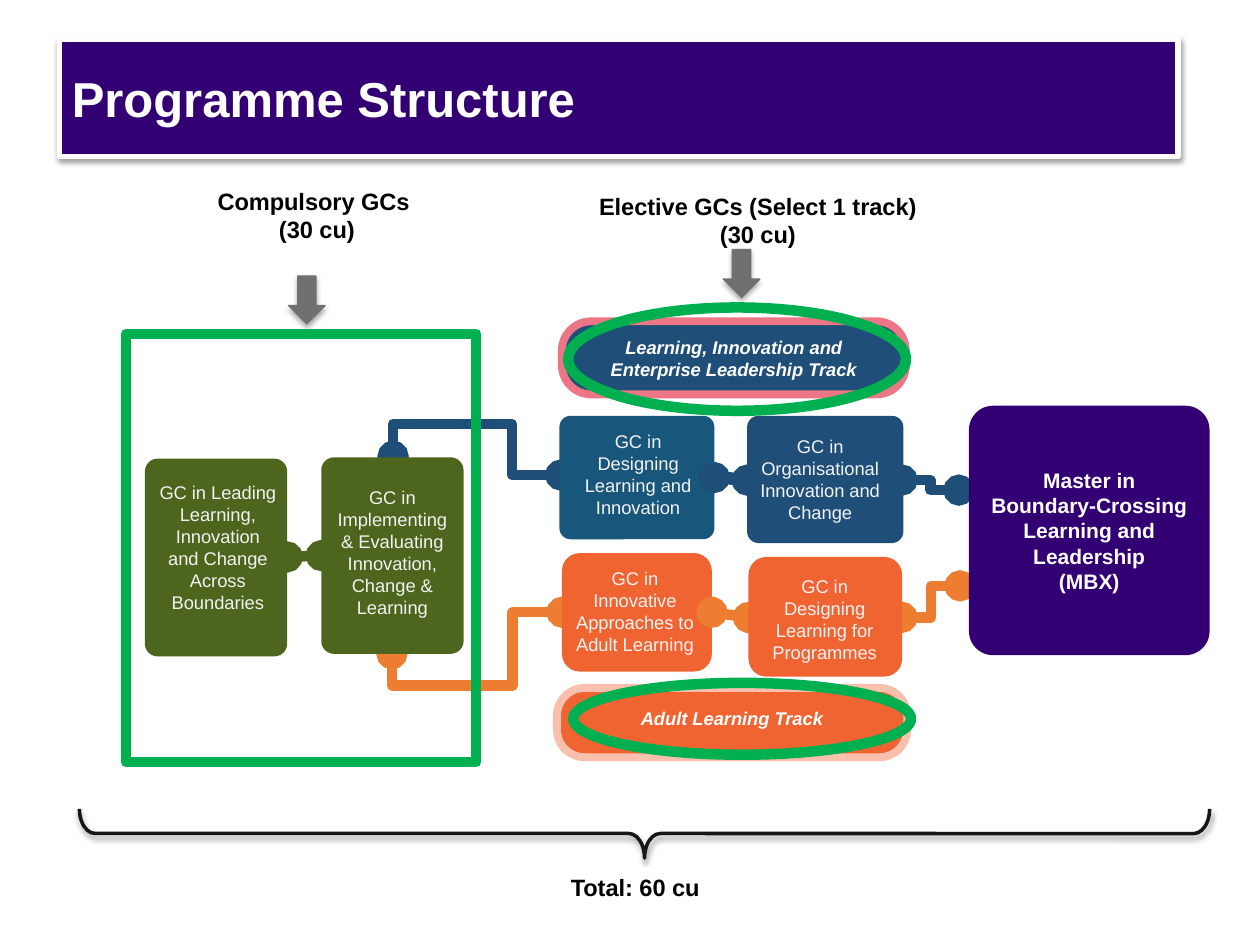
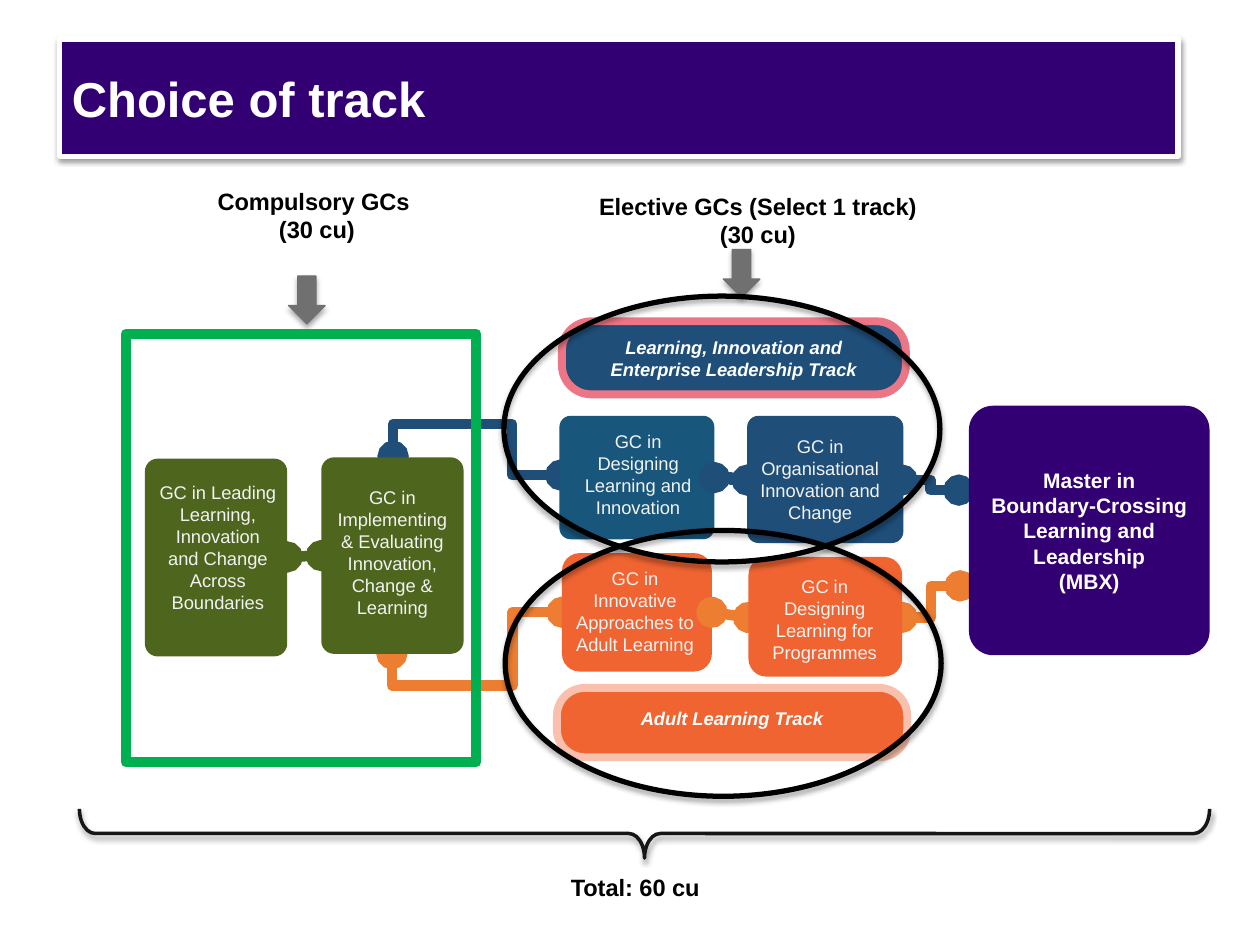
from lxml import etree
from pptx import Presentation
from pptx.dml.color import RGBColor
from pptx.enum import shapes, text
from pptx.oxml.ns import qn
from pptx.util import Inches, Pt

FONT = "Arial"
PURPLE, NAVY, TEAL, OLIVE = "320073", "1F4E79", "18567B", "4E651D"
ORANGE, AMBER, GREEN, GREY = "F06432", "ED7D31", "00B050", "707070"
PINK, PEACH, INK = "EC7685", "F9C1AD", "161616"
WHITE, PALE, BLACK = "FFFFFF", "F2F2F2", "000000"
CENTER, LEFT = text.PP_ALIGN.CENTER, text.PP_ALIGN.LEFT
TOP, MIDDLE = text.MSO_ANCHOR.TOP, text.MSO_ANCHOR.MIDDLE
KIND = shapes.MSO_SHAPE
DEEP_SHADOW, SOFT_SHADOW = (38, 1.6), (35, 1.8)  # opacity %, distance pt


def rgb(value):
    return RGBColor.from_string(value)


def add(parent, tag, **attrs):
    return etree.SubElement(parent, qn(tag), {k: str(v) for k, v in attrs.items()})


class Deck:
    def __init__(self):
        self.prs = Presentation()
        self.prs.slide_width, self.prs.slide_height = Inches(10), Inches(7.5)
        self.slide = None

    def new_slide(self, title):
        self.slide = self.prs.slides.add_slide(self.prs.slide_layouts[5])
        sp = self.slide.shapes.title
        sp.left, sp.top, sp.width, sp.height = map(Inches, (0.47, 0.31, 8.88, 0.93))
        geom = etree.Element(qn("a:prstGeom"), prst="roundRect")
        add(geom, "a:avLst")
        sp._element.spPr.find(qn("a:xfrm")).addnext(geom)
        self.paint(sp, PURPLE, (WHITE, 3), DEEP_SHADOW)
        self.set_text(sp, title, 28, WHITE, bold=True, align=LEFT, anchor=MIDDLE)

    def paint(self, sp, fill=None, line=None, shadow=None):
        """Fill, outline as (colour, points) and shadow as (opacity, distance)."""
        if fill:
            sp.fill.solid()
            sp.fill.fore_color.rgb = rgb(fill)
        else:
            sp.fill.background()
        if line:
            sp.line.color.rgb, sp.line.width = rgb(line[0]), Pt(line[1])
        else:
            sp.line.fill.background()
        spPr = sp._element.spPr
        effects = spPr.find(qn("a:effectLst"))
        if effects is None:
            effects = add(spPr, "a:effectLst")
        if shadow:
            opacity, distance = shadow
            outer = add(effects, "a:outerShdw", blurRad=Pt(3.1), dist=Pt(distance),
                        dir=90 * 60000, algn="ctr", rotWithShape=0)
            add(add(outer, "a:srgbClr", val=BLACK), "a:alpha", val=opacity * 1000)

    def set_text(self, sp, words, size, color, bold=False, italic=False, align=CENTER,
                 anchor=TOP, insets=(0.1, 0.05, 0.1, 0.05), wrap=True):
        """Fill in paragraphs split at newlines, with line breaks at '|'."""
        tf = sp.text_frame
        tf.auto_size, tf.word_wrap = text.MSO_AUTO_SIZE.NONE, wrap
        tf.vertical_anchor = anchor
        (tf.margin_left, tf.margin_top,
         tf.margin_right, tf.margin_bottom) = map(Inches, insets)
        for i, paragraph in enumerate(words.split("\n")):
            p = tf.add_paragraph() if i else tf.paragraphs[0]
            p.alignment = align
            for j, part in enumerate(paragraph.split("|")):
                if j:
                    p.add_line_break()
                r = p.add_run()
                r.text = part
                f = r.font
                f.name, f.size, f.bold, f.italic = FONT, Pt(size), bold, italic
                f.color.rgb = rgb(color)

    def shape(self, kind, box, fill=None, line=None, shadow=None, adj=()):
        sp = self.slide.shapes.add_shape(kind, *map(Inches, box))
        sp.shadow.inherit = False
        self.paint(sp, fill, line, shadow)
        for i, value in enumerate(adj):
            sp.adjustments[i] = value
        return sp

    def card(self, box, fill, words, insets, round_=0.09):
        """Rounded course card; insets are left, top, right from its edges."""
        sp = self.shape(KIND.ROUNDED_RECTANGLE, box, fill, adj=[round_])
        corner = 0.29 * round_ * min(box[2:])  # space the rounding already takes
        left, top, right = (round(v - corner, 2) for v in insets)
        self.set_text(sp, words, 10.5, PALE, insets=(left, top, right, 0))

    def track(self, box, fill, edge, words, bottom=0.05):
        sp = self.shape(KIND.ROUNDED_RECTANGLE, box, fill, (edge, 4.5), adj=[0.4])
        self.set_text(sp, words, 10.5, WHITE, True, True, anchor=MIDDLE,
                      insets=(0.1, 0.05, 0.1, bottom))

    def label(self, box, words, align=CENTER, wrap=False):
        sp = self.slide.shapes.add_textbox(*map(Inches, box))
        self.set_text(sp, words, 13.5, BLACK, True, align=align, insets=(0,) * 4, wrap=wrap)

    def link(self, start, end, color, elbow=True):
        kind = shapes.MSO_CONNECTOR.ELBOW if elbow else shapes.MSO_CONNECTOR.STRAIGHT
        c = self.slide.shapes.add_connector(kind, *map(Inches, (*start, *end)))
        c.line.color.rgb, c.line.width = rgb(color), Pt(6)
        spPr = c._element.spPr
        for end_tag in ("a:headEnd", "a:tailEnd"):
            add(spPr.find(qn("a:ln")), end_tag, type="oval")
        add(spPr, "a:effectLst")
        return c

    def branch(self, box, color, turn, flips, adj):
        """Three-bend link; box is its frame before it is turned."""
        x, y, w, h = box
        spPr = self.link((x, y), (x + w, y + h), color)._element.spPr
        xfrm = spPr.find(qn("a:xfrm"))
        xfrm.set("rot", str(turn * 60000))
        for flip in flips:
            xfrm.set(flip, "1")
        geom = spPr.find(qn("a:prstGeom"))
        geom.set("prst", "bentConnector4")
        guides = geom.find(qn("a:avLst"))
        for i, value in enumerate(adj, 1):
            add(guides, "a:gd", name=f"adj{i}", fmla=f"val {round(value * 100000)}")


def programme_map(deck):
    """Courses, tracks and links that lead to the degree."""
    deck.branch((3.62, 4.35, 0.33, 1.35), AMBER, 90, ("flipH", "flipV"), (-0.76, 0.71))
    deck.branch((3.71, 3.03, 0.15, 1.33), NAVY, 270, ("flipH",), (-1.7, 0.71))
    deck.card((4.44, 3.3, 1.23, 0.98), TEAL,
              "GC in\nDesigning Learning and Innovation", (0.11, 0.12, 0.09))
    deck.card((5.93, 3.3, 1.24, 1.01), NAVY,
              "GC in Organisational Innovation and Change", (0.06, 0.16, 0.14))
    deck.card((1.15, 3.64, 1.13, 1.57), OLIVE,
              "GC in Leading Learning, Innovation and Change Across Boundaries",
              (0.11, 0.18, 0.08))
    deck.card((2.55, 3.63, 1.13, 1.56), OLIVE,
              "GC in Implementing & Evaluating Innovation, Change & Learning",
              (0.07, 0.23, 0.07))
    deck.card((4.46, 4.39, 1.19, 0.94), ORANGE,
              "GC in Innovative Approaches to Adult Learning", (0.08, 0.11, 0.11), 0.15)
    deck.track((4.46, 2.55, 2.73, 0.58), NAVY, PINK,
               "Learning, Innovation and Enterprise Leadership Track")

    deck.link((5.67, 3.79), (5.93, 3.81), NAVY)
    deck.link((5.65, 4.86), (5.94, 4.9), AMBER, elbow=False)
    deck.link((2.55, 4.41), (2.28, 4.42), OLIVE, elbow=False)
    deck.link((7.16, 3.81), (7.61, 3.89), NAVY)
    deck.link((7.16, 4.9), (7.62, 4.65), AMBER)

    degree = deck.shape(KIND.ROUNDED_RECTANGLE, (7.69, 3.22, 1.91, 1.98), PURPLE, adj=[0.1])
    deck.set_text(degree, "Master in Boundary-Crossing Learning and Leadership\n(MBX)",
                  12, WHITE, True, anchor=MIDDLE)
    deck.track((4.42, 5.46, 2.78, 0.55), ORANGE, PEACH, "Adult Learning Track", 0.12)
    deck.card((5.94, 4.42, 1.22, 0.95), ORANGE,
              "GC in Designing Learning for Programmes", (0.09, 0.14, 0.1), 0.15)


def credit_units(deck):
    """Headings, arrows, compulsory frame and the total under its brace."""
    brace = deck.shape(KIND.RIGHT_BRACE, (4.92, 2.13, 0.39, 8.97), None, (INK, 2),
                       DEEP_SHADOW, (0.32, 0.5))
    brace.rotation = 90
    deck.label((4.53, 6.93, 1.29, 0.23), "Total: 60 cu", LEFT, wrap=True)
    deck.label((2.14, 1.48, 0.75, 0.75), "Compulsory GCs |(30 cu)")
    deck.label((5.64, 1.52, 0.75, 1.13), "Elective GCs (Select 1 track)|(30 cu)")
    for x, y in ((2.29, 2.19), (5.74, 1.98)):
        deck.shape(KIND.DOWN_ARROW, (x, y, 0.29, 0.38), GREY, (GREY, 0.75), SOFT_SHADOW)
    deck.shape(KIND.RECTANGLE, (1, 2.65, 2.78, 3.4), None, (GREEN, 6))


def main():
    deck = Deck()
    track_rings = [(4.51, 2.44, 2.68, 0.82), (4.55, 5.42, 2.68, 0.57)]
    choice_rings = [(4, 2.35, 3.46, 2.11), (4.01, 4.21, 3.46, 2.11)]
    for title, rings, line, shadow in (
            ("Programme Structure", track_rings, (GREEN, 6), None),
            ("Choice of track", choice_rings, (BLACK, 3), SOFT_SHADOW)):
        deck.new_slide(title)
        programme_map(deck)
        credit_units(deck)
        for box in rings:
            deck.shape(KIND.OVAL, box, None, line, shadow)
    deck.prs.save("out.pptx")


if __name__ == "__main__":
    main()
